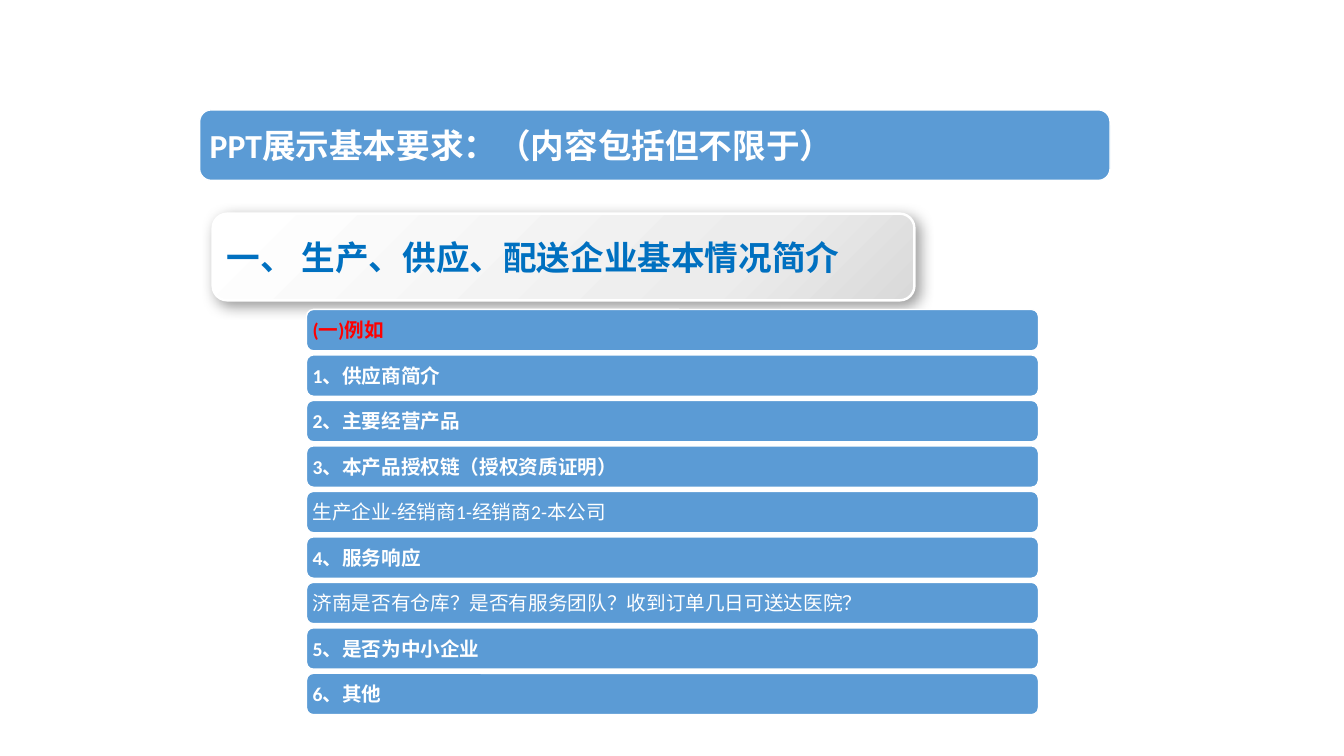
from dataclasses import dataclass

from lxml import etree
from pptx import Presentation
from pptx import util as u
from pptx.dml.color import RGBColor
from pptx.enum import shapes, text
from pptx.oxml import parse_xml
from pptx.oxml.ns import nsdecls, qn

PX = 9144  # EMU: 100 px to the inch


@dataclass(frozen=True)
class Theme:
    bar: str = "5B9BD5"
    white: str = "FFFFFF"
    heading: str = "0070C0"
    accent: str = "FF0000"
    shadow: str = "000000"
    card_stops: tuple = ((3, "FFFFFF"), (73, "ECECEC"), (100, "D9D9D9"))
    latin: str = "Calibri"
    chinese: str = "Noto Sans CJK SC"
    heading_size: int = 24
    row_size: int = 14


THEME = Theme()
HEADING = "PPT展示基本要求：（内容包括但不限于）"
SECTION = "一、 生产、供应、配送企业基本情况简介"
ROWS = [
    ("(一)例如", {"color": THEME.accent}),
    ("1、供应商简介", {}),
    ("2、主要经营产品", {}),
    ("3、本产品授权链（授权资质证明）", {}),
    ("生产企业-经销商1-经销商2-本公司", {"bold": False}),
    ("4、服务响应", {}),
    ("济南是否有仓库？是否有服务团队？收到订单几日可送达医院？", {"bold": False}),
    ("5、是否为中小企业", {}),
    ("6、其他", {}),
]


def emu(box):
    return [u.Emu(round(length * PX)) for length in box]


def write(shape, words, size=THEME.row_size, color=THEME.white, bold=True,
          font=THEME.latin, inset=10, inset_y=5):
    frame = shape.text_frame
    frame.word_wrap = True
    frame.auto_size = text.MSO_AUTO_SIZE.NONE
    frame.vertical_anchor = text.MSO_ANCHOR.MIDDLE
    frame.margin_left = frame.margin_right = u.Emu(inset * PX)
    frame.margin_top = frame.margin_bottom = u.Emu(inset_y * PX)
    para = frame.paragraphs[0]
    para.alignment = text.PP_ALIGN.LEFT
    para.line_spacing = 1.0
    span = para.add_run()
    span.text = words
    span.font.size = u.Pt(size)
    span.font.bold = bold
    span.font.name = font
    span.font.color.rgb = RGBColor.from_string(color)
    east_asian = etree.SubElement(span.font._element, qn("a:ea"))
    east_asian.set("typeface", THEME.chinese)


def add_bar(page, box, line_width=1):
    bar = page.shapes.add_shape(shapes.MSO_SHAPE.ROUNDED_RECTANGLE, *emu(box))
    bar.shadow.inherit = False
    bar.fill.solid()
    bar.fill.fore_color.rgb = RGBColor.from_string(THEME.bar)
    bar.line.color.rgb = RGBColor.from_string(THEME.white)
    bar.line.width = u.Pt(line_width)
    return bar


def add_heading(page, box):
    """Set the slide title over its blue bar."""
    title = page.shapes.title
    title.left, title.top, title.width, title.height = emu(box)
    title.element.addprevious(add_bar(page, box).element)
    write(title, HEADING, size=THEME.heading_size)


def add_section_card(page, box):
    """Add the section name on a grey gradient with a soft shadow."""
    card = add_bar(page, box, line_width=1.75)
    properties = card.element.spPr
    stops = "".join(
        f'<a:gs pos="{percent * 1000}"><a:srgbClr val="{color}"/></a:gs>'
        for percent, color in THEME.card_stops)
    gradient = parse_xml(
        f'<a:gradFill {nsdecls("a")} rotWithShape="1"><a:gsLst>{stops}</a:gsLst>'
        f'<a:lin ang="{45 * 60000}" scaled="0"/></a:gradFill>')
    properties.replace(properties.find(qn("a:solidFill")), gradient)
    shadow = parse_xml(
        f'<a:outerShdw {nsdecls("a")} blurRad="{u.Pt(10)}" dist="{u.Pt(4)}" '
        f'dir="{45 * 60000}" algn="tl" rotWithShape="0">'
        f'<a:srgbClr val="{THEME.shadow}"><a:alpha val="40000"/></a:srgbClr>'
        f'</a:outerShdw>')
    properties.find(qn("a:effectLst")).append(shadow)
    write(card, SECTION, size=THEME.heading_size, color=THEME.heading,
          font=THEME.chinese)


def add_rows(page, box, row_height=41):
    """Spread the rows evenly from the top to the bottom of the box."""
    left, top, width, height = box
    pitch = (height - row_height) / (len(ROWS) - 1)
    for index, (words, style) in enumerate(ROWS):
        bar = add_bar(page, (left, top + index * pitch, width, row_height))
        write(bar, words, inset=4, inset_y=4, **style)


def main():
    deck = Presentation()
    deck.slide_width, deck.slide_height = emu((1333, 750))
    title_only = deck.slide_layouts[5]
    page = deck.slides.add_slide(title_only)
    add_section_card(page, (211, 212, 696, 86))
    add_heading(page, (198, 109, 903, 70))
    add_rows(page, (304, 307, 726, 402))
    deck.save("out.pptx")


if __name__ == "__main__":
    main()
